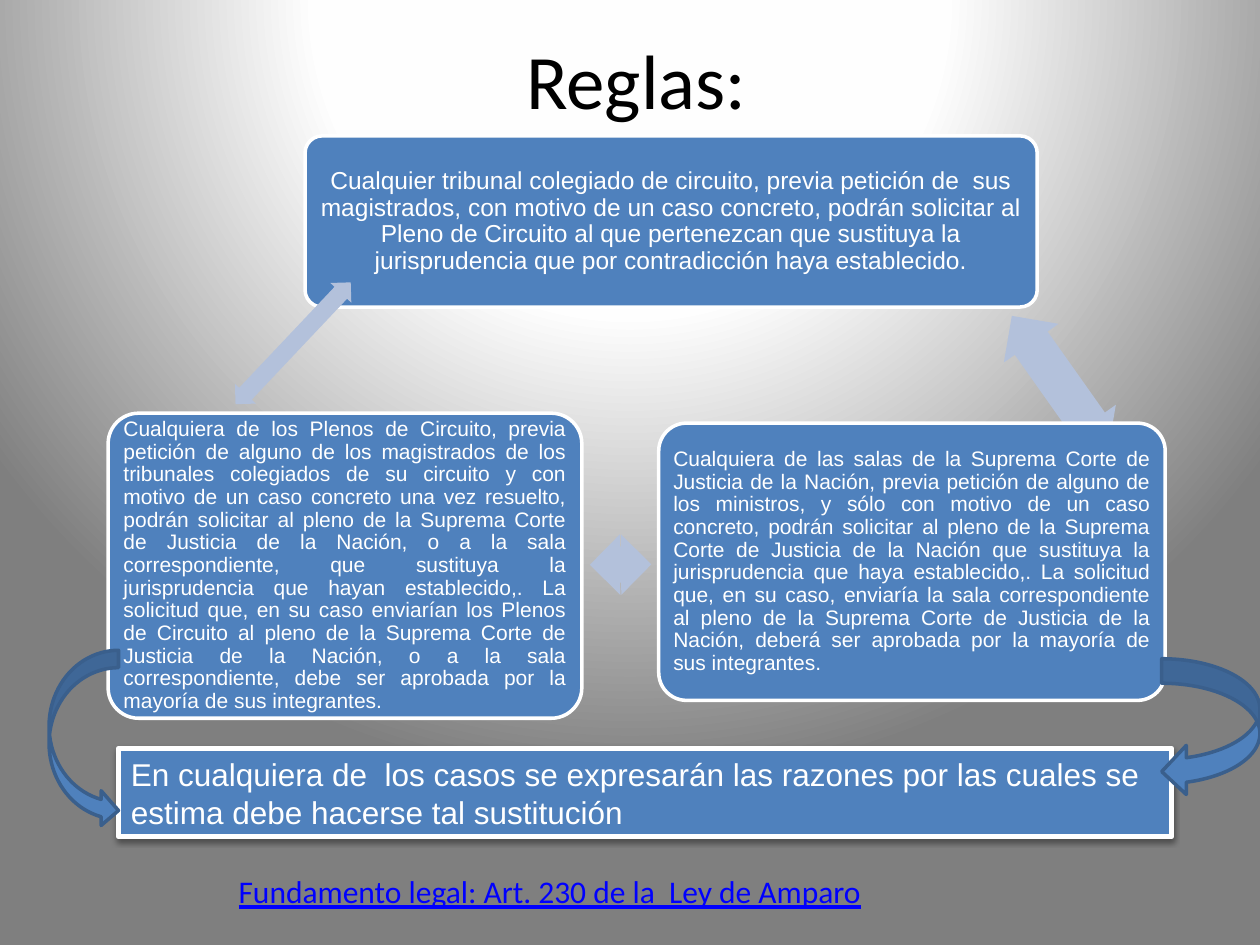
import dataclasses

import pptx
import pptx.dml.color
import pptx.enum.shapes
import pptx.enum.text
import pptx.oxml
import pptx.oxml.ns
import pptx.util

Cm = pptx.util.Cm
Align = pptx.enum.text.PP_ALIGN
Shape = pptx.enum.shapes.MSO_SHAPE
NAMESPACE = pptx.oxml.ns.nsdecls("a")

COURT_RULE = (
    "Cualquier tribunal colegiado de circuito, previa petición de  sus magistrados, "
    "con motivo de un caso concreto, podrán solicitar al Pleno de Circuito al que "
    "pertenezcan que sustituya la jurisprudencia que por contradicción haya establecido."
)
CHAMBER_RULE = (
    "Cualquiera de las salas de la Suprema Corte de Justicia de la Nación, previa "
    "petición de alguno de los ministros, y sólo con motivo de un caso concreto, podrán "
    "solicitar al pleno de la Suprema Corte de Justicia de la Nación que sustituya la "
    "jurisprudencia que haya establecido,. La solicitud que, en su caso, enviaría la sala "
    "correspondiente al pleno de la Suprema Corte de Justicia de la Nación, deberá ser "
    "aprobada por la mayoría de sus integrantes."
)
PLENARY_RULE = (
    "Cualquiera de los Plenos de Circuito, previa petición de alguno de los magistrados "
    "de los tribunales colegiados de su circuito y con motivo de un caso concreto una vez "
    "resuelto, podrán solicitar al pleno de la Suprema Corte de Justicia de la Nación, o a "
    "la sala correspondiente, que sustituya la jurisprudencia que hayan establecido,. La "
    "solicitud que, en su caso enviarían los Plenos de Circuito al pleno de la Suprema "
    "Corte de Justicia de la Nación, o a la sala correspondiente, debe ser aprobada por la "
    "mayoría de sus integrantes."
)
CONCLUSION = (
    "En cualquiera de  los casos se expresarán las razones por las cuales se estima debe "
    "hacerse tal sustitución"
)


@dataclasses.dataclass(frozen=True)
class Theme:
    """Colours, fonts and type sizes of the slide."""
    black: str = "000000"
    white: str = "FFFFFF"
    blue: str = "4F81BD"
    pale: str = "B3C1DB"
    edge: str = "3A5F8C"
    link: str = "0000FF"
    backdrop: tuple = ((0, "FFFFFF"), (40, "FEFEFE"), (100, "7F7F7F"))
    heading_font: str = "Calibri"
    body_font: str = "Arial"
    title_size: int = 44
    large_size: int = 18
    medium_size: int = 14
    small_size: int = 12


THEME = Theme()


@dataclasses.dataclass(frozen=True)
class Box:
    """A rectangle in centimetres."""
    left: float
    top: float
    width: float
    height: float

    def inside(self, left, top, width, height):
        """Return a box whose corner is measured from this one."""
        return Box(self.left + left, self.top + top, width, height)

    def lengths(self):
        """Return left, top, width and height as lengths."""
        return [Cm(value) for value in (self.left, self.top, self.width, self.height)]


def colour(value):
    """Return a colour object for a hexadecimal string."""
    return pptx.dml.color.RGBColor.from_string(value)


def write(frame, text, size, font, tint, align, spacing=None, underline=None, inset=None):
    """Write one formatted paragraph into a text frame."""
    frame.word_wrap = True
    frame.vertical_anchor = pptx.enum.text.MSO_ANCHOR.MIDDLE
    if inset is not None:
        frame.margin_left = frame.margin_right = Cm(inset)
        frame.margin_top = frame.margin_bottom = Cm(inset)
    para = frame.paragraphs[0]
    para.alignment = align
    para.line_spacing = spacing
    span = para.add_run()
    span.text = text
    span.font.size = pptx.util.Pt(size)
    span.font.name = font
    span.font.color.rgb = colour(tint)
    span.font.underline = underline


def add_shape(page, kind, box, fill, line=None, weight=2, rotation=0, adjustments=()):
    """Add a flat shape with its fill, outline and rotation."""
    shape = page.shapes.add_shape(kind, *box.lengths())
    shape.shadow.inherit = False
    shape.fill.solid()
    shape.fill.fore_color.rgb = colour(fill)
    if line:
        shape.line.color.rgb = colour(line)
        shape.line.width = pptx.util.Pt(weight)
    else:
        shape.line.fill.background()
    shape.rotation = rotation
    for index, value in enumerate(adjustments):
        shape.adjustments[index] = value
    return shape


def paint_background(page):
    """Fill the page with a radial gradient centred above it."""
    stops = "".join(
        f'<a:gs pos="{place * 1000}"><a:srgbClr val="{tint}"/></a:gs>'
        for place, tint in THEME.backdrop
    )
    gradient = pptx.oxml.parse_xml(
        f'<a:gradFill {NAMESPACE} rotWithShape="1"><a:gsLst>{stops}</a:gsLst>'
        '<a:path path="circle"><a:fillToRect l="50000" t="-80000" r="50000" b="180000"/>'
        "</a:path></a:gradFill>"
    )
    page.background.fill.solid()
    solid = page.background._cSld.find(".//" + pptx.oxml.ns.qn("a:solidFill"))
    solid.getparent().replace(solid, gradient)


def add_drop_shadow(shape):
    """Give a shape a soft shadow below it."""
    effects = shape._element.spPr.find(pptx.oxml.ns.qn("a:effectLst"))
    effects.append(pptx.oxml.parse_xml(
        f'<a:outerShdw {NAMESPACE} blurRad="40000" dist="20000" dir="5400000" '
        f'rotWithShape="0"><a:srgbClr val="{THEME.black}"><a:alpha val="38000"/>'
        "</a:srgbClr></a:outerShdw>"
    ))


def place_title(page, box):
    """Place the title in its placeholder."""
    title = page.shapes.title
    title.left, title.top, title.width, title.height = box.lengths()
    write(title.text_frame, "Reglas:", THEME.title_size, THEME.heading_font,
          THEME.black, Align.CENTER)


def place_cycle(page, box):
    """Place the three rules and the double arrows between them."""
    def add_rule(place, text, size, align, inset):
        """Add one rounded rule box."""
        rule = add_shape(page, Shape.ROUNDED_RECTANGLE, place, THEME.blue, THEME.white,
                         adjustments=(0.1,))
        write(rule.text_frame, text, size, THEME.body_font, THEME.white, align,
              spacing=0.9, inset=inset)

    def add_arrow(place, rotation):
        """Add one double arrow."""
        add_shape(page, Shape.LEFT_RIGHT_ARROW, place, THEME.pale, rotation=rotation,
                  adjustments=(0.6, 0.5))

    add_rule(box.inside(3.97, 0, 14.76, 3.45), COURT_RULE, THEME.medium_size,
             Align.CENTER, 0.15)
    add_arrow(box.inside(17.51, 4.32, 3.35, 1.35), 54.7)
    add_rule(box.inside(11.1, 5.79, 10.21, 5.59), CHAMBER_RULE, THEME.small_size,
             Align.JUSTIFY, 0.13)
    add_arrow(box.inside(9.71, 8.03, 1.24, 1.22), 179.6)
    add_rule(box.inside(0, 5.59, 9.55, 6.15), PLENARY_RULE, THEME.small_size,
             Align.JUSTIFY, 0.13)
    add_arrow(box.inside(2.04, 3.89, 3.38, 0.58), 313.4)


def place_reference(page, box):
    """Place the legal reference line."""
    reference = page.shapes.add_textbox(*box.lengths())
    write(reference.text_frame, "Fundamento legal: Art. 230 de la  Ley de Amparo",
          THEME.large_size, THEME.heading_font, THEME.link, Align.CENTER, underline=True)


def place_conclusion(page, box):
    """Place the concluding bar and the curved arrows leading to it."""
    bar = add_shape(page, Shape.RECTANGLE, box.inside(1.4, 1.98, 21.23, 1.78),
                    THEME.blue, THEME.white, weight=3)
    add_drop_shadow(bar)
    write(bar.text_frame, CONCLUSION, THEME.large_size, THEME.body_font, THEME.white,
          Align.LEFT)
    add_shape(page, Shape.CURVED_RIGHT_ARROW, box.inside(0, 0, 1.4, 3.58),
              THEME.blue, THEME.edge)
    add_shape(page, Shape.CURVED_LEFT_ARROW, box.inside(22.43, 0.17, 1.98, 2.77),
              THEME.blue, THEME.edge)


def main():
    """Build the deck and save it."""
    deck = pptx.Presentation()
    deck.slide_width, deck.slide_height = Cm(25.4), Cm(19.05)
    page = deck.slides.add_slide(deck.slide_layouts.get_by_name("Title Only"))
    paint_background(page)
    place_title(page, Box(1.4, 0, 22.86, 3.17))
    place_cycle(page, Box(2.18, 2.74, 21.31, 11.74))
    place_reference(page, Box(1.09, 17.57, 19.99, 0.79))
    place_conclusion(page, Box(0.99, 13.11, 24.41, 3.76))
    deck.save("out.pptx")


if __name__ == "__main__":
    main()
